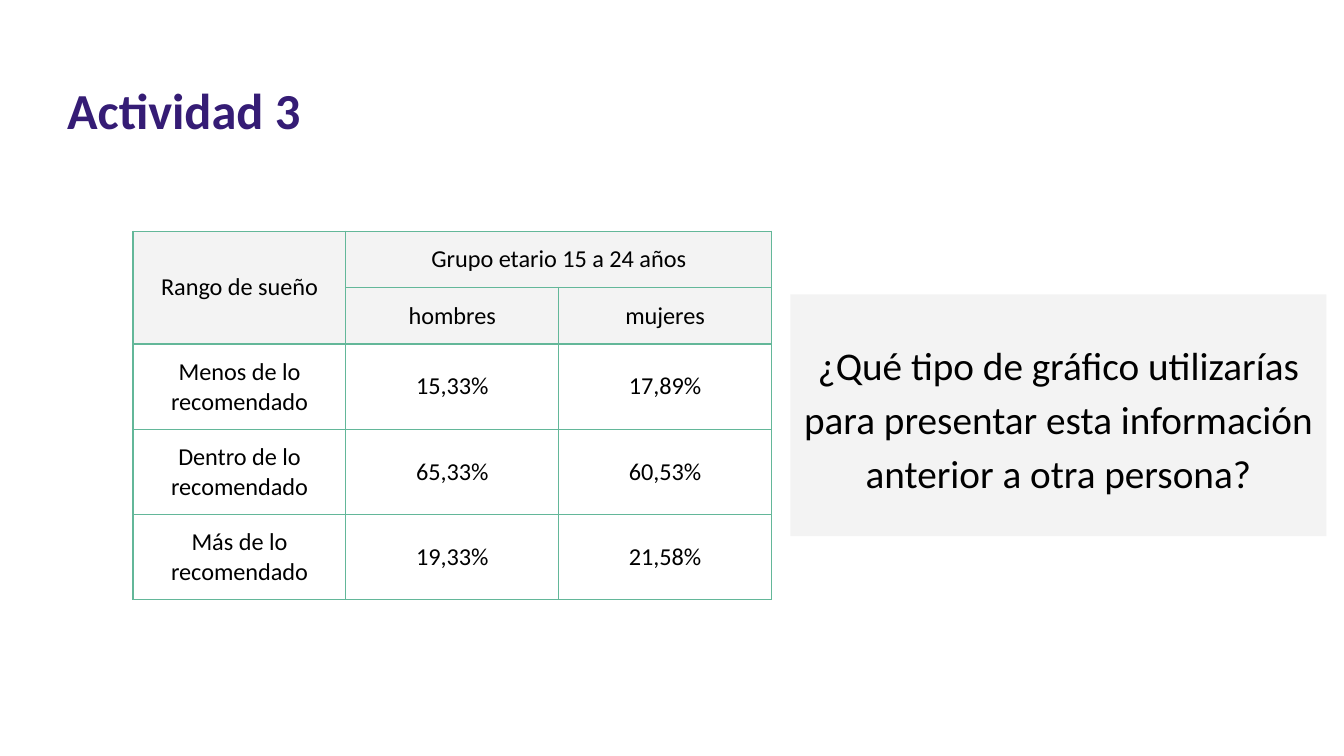
from lxml import etree
from pptx import Presentation
from pptx.dml.color import RGBColor
from pptx.enum import shapes, text
from pptx.oxml import ns
from pptx.util import Inches, Pt

PURPLE = RGBColor(0x35, 0x1C, 0x75)
BLACK = RGBColor(0, 0, 0)
PALE = RGBColor(0xF3, 0xF3, 0xF3)
GREEN = RGBColor(0x63, 0xB7, 0x99)

ROWS = [
    ("Rango de sueño", "Grupo etario 15 a 24 años", ""),
    ("", "hombres", "mujeres"),
    ("Menos de lo recomendado", "15,33%", "17,89%"),
    ("Dentro de lo recomendado", "65,33%", "60,53%"),
    ("Más de lo recomendado", "19,33%", "21,58%"),
]
HEADS = 2


def write(frame, words, size=13, color=BLACK, bold=False,
          align=text.PP_ALIGN.CENTER, space=None):
    para = frame.paragraphs[0]
    para.alignment = align
    if space:
        para.line_spacing = space
    run = para.add_run()
    run.text = words
    font = run.font
    font.name, font.size, font.bold = "Calibri", Pt(size), bold
    font.color.rgb = color


def inset(item, gap):
    item.margin_left = item.margin_right = Inches(gap)
    item.margin_top = item.margin_bottom = Inches(gap)


def add_title(slide, words):
    box = slide.shapes.add_textbox(
        Inches(0.43), Inches(0.52), Inches(8.98), Inches(0.61))
    frame = box.text_frame
    frame.word_wrap = True
    inset(frame, 0.07)
    write(frame, words, size=27, color=PURPLE, bold=True,
          align=text.PP_ALIGN.LEFT)


def edge(cell, color):
    # Border lines must come before the fill
    props = cell._tc.get_or_add_tcPr()
    for pos, side in enumerate("LRTB"):
        line = etree.Element(ns.qn("a:ln" + side), w=str(Pt(0.75)))
        fill = etree.SubElement(line, ns.qn("a:solidFill"))
        etree.SubElement(fill, ns.qn("a:srgbClr"), val=str(color))
        props.insert(pos, line)


def add_grid(slide):
    wide = Inches(4.75)
    frame = slide.shapes.add_table(
        len(ROWS), 3, Inches(0.99), Inches(1.72), wide, Inches(2.73))
    table = frame.table
    table.first_row = table.horz_banding = False
    for col in table.columns:
        col.width = wide // 3
    for r, row in enumerate(ROWS):
        table.rows[r].height = Inches(0.42 if r < HEADS else 0.63)
        for c, words in enumerate(row):
            cell = table.cell(r, c)
            inset(cell, 0.1)
            cell.vertical_anchor = text.MSO_ANCHOR.MIDDLE
            if r < HEADS:
                cell.fill.solid()
                cell.fill.fore_color.rgb = PALE
            else:
                cell.fill.background()
            edge(cell, GREEN)
            if words:
                write(cell.text_frame, words)
    # Merged headings
    table.cell(0, 0).merge(table.cell(1, 0))
    table.cell(0, 1).merge(table.cell(0, 2))


def add_card(slide, words):
    card = slide.shapes.add_shape(
        shapes.MSO_SHAPE.RECTANGLE,
        Inches(5.88), Inches(2.19), Inches(3.99), Inches(1.8))
    card.shadow.inherit = False
    card.fill.solid()
    card.fill.fore_color.rgb = PALE
    card.line.fill.background()
    frame = card.text_frame
    frame.word_wrap = True
    frame.vertical_anchor = text.MSO_ANCHOR.MIDDLE
    inset(frame, 0.07)
    write(frame, words, size=21, space=1.15)


def main():
    deck = Presentation()
    # Widescreen, 16 to 9
    deck.slide_width = Inches(10)
    deck.slide_height = Inches(10) * 9 // 16
    slide = deck.slides.add_slide(deck.slide_layouts[6])
    add_title(slide, "Actividad 3")
    add_grid(slide)
    add_card(slide, "¿Qué tipo de gráfico utilizarías para presentar "
                    "esta información anterior a otra persona?")
    deck.save("out.pptx")


if __name__ == "__main__":
    main()
